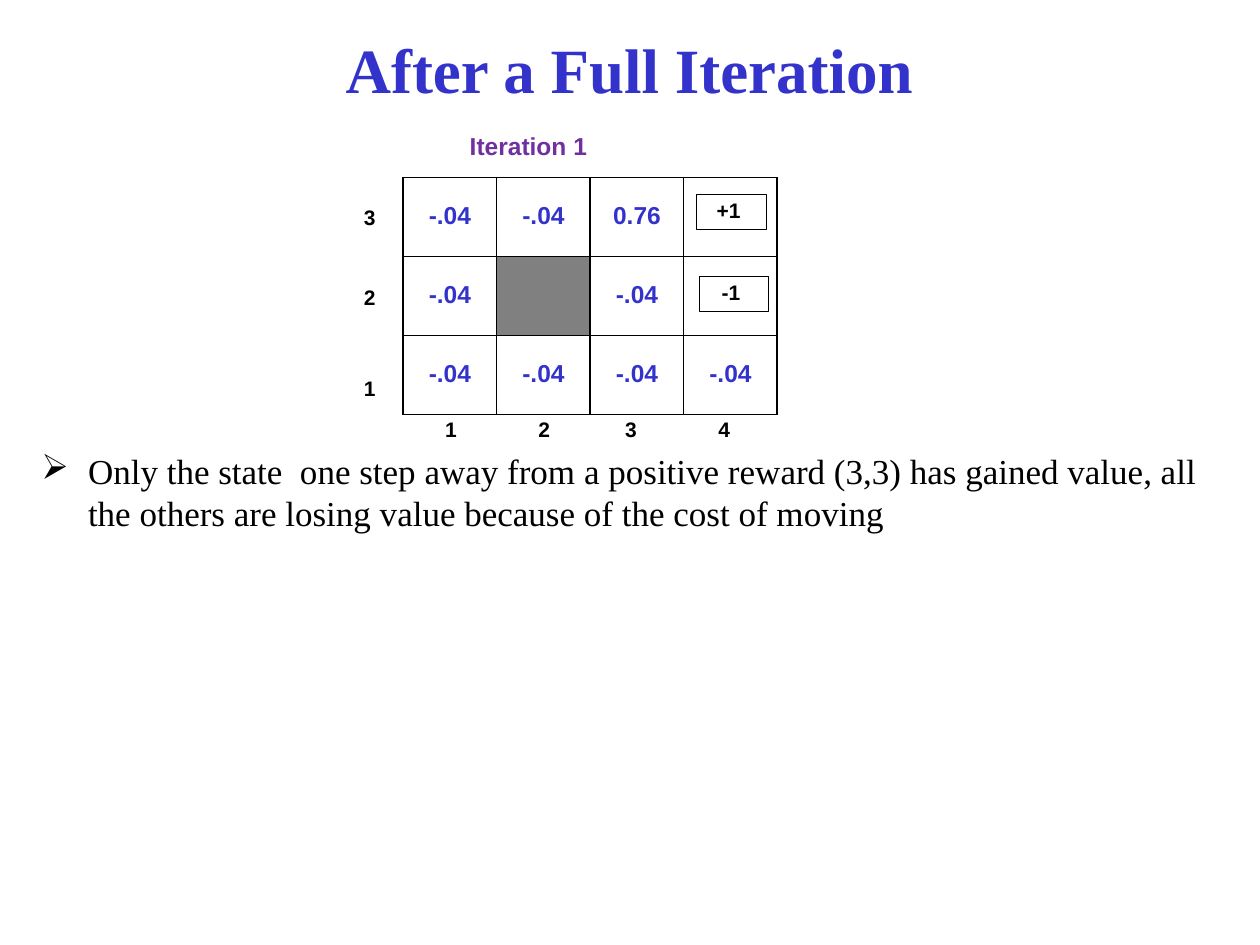
from typing import NamedTuple

from lxml import etree
from pptx import Presentation
from pptx import util as u
from pptx.dml.color import RGBColor
from pptx.enum import shapes, text
from pptx.oxml.ns import qn

BLACK, WHITE, BLUE, GRAY, PURPLE = "000000", "FFFFFF", "3333CC", "808080", "7030A0"
LEFT, TOP = 3.2, 1.41
WIDE, HIGH = 2.97, 1.88
VALUES = [
    ["-.04", "-.04", "0.76", ""],
    ["-.04", None, "-.04", ""],
    ["-.04", "-.04", "-.04", "-.04"],
]
STOPS = [0.28, 1.02, 1.71, 2.45]


class Box(NamedTuple):
    left: float
    top: float
    width: float
    height: float

    def place(self):
        return [u.Inches(n) for n in self]


class Reward(NamedTuple):
    label: str
    box: Box


REWARDS = [
    Reward("+1 ", Box(5.53, 1.54, 0.55, 0.28)),
    Reward("-1 ", Box(5.55, 2.19, 0.55, 0.28)),
]


def paint(color, code: str):
    color.rgb = RGBColor.from_string(code)


def write(para, words: str, size=12, font="Arial", color=BLACK, bold=True,
          align=text.PP_ALIGN.LEFT, space=0.9, before=0):
    para.alignment = align
    para.line_spacing = space
    para.space_before = u.Pt(before)
    run = para.add_run()
    run.text = words
    run.font.size = u.Pt(size)
    run.font.name = font
    run.font.bold = bold
    paint(run.font.color, color)


def frame(slide, box: Box):
    area = slide.shapes.add_textbox(*box.place()).text_frame
    area.word_wrap = True
    return area


def edge(cell):
    """Give a cell thin black borders on all four sides."""
    props = cell._tc.get_or_add_tcPr()
    for spot, side in enumerate(("lnL", "lnR", "lnT", "lnB")):
        line = etree.Element(qn(f"a:{side}"), w=str(u.Pt(1)))
        fill = etree.SubElement(line, qn("a:solidFill"))
        etree.SubElement(fill, qn("a:srgbClr"), val=BLACK)
        props.insert(spot, line)


def draw_grid(slide):
    rows, cols = len(VALUES), len(VALUES[0])
    place = Box(LEFT, TOP, WIDE, HIGH).place()
    table = slide.shapes.add_table(rows, cols, *place).table
    for r, line in enumerate(VALUES):
        for c, value in enumerate(line):
            cell = table.cell(r, c)
            cell.vertical_anchor = text.MSO_ANCHOR.MIDDLE
            cell.fill.solid()
            paint(cell.fill.fore_color, GRAY if value is None else WHITE)
            edge(cell)
            if value:
                write(cell.text_frame.paragraphs[0], value, size=14,
                      color=BLUE, align=text.PP_ALIGN.CENTER)


def draw_axes(slide):
    side = frame(slide, Box(2.66, 1.6, 0.55, 1.63))
    for n, (label, gap) in enumerate((("3", 0), ("2", 32.7), ("1", 39))):
        para = side.add_paragraph() if n else side.paragraphs[0]
        write(para, label, align=text.PP_ALIGN.CENTER, before=gap)

    para = frame(slide, Box(LEFT, 3.28, WIDE, 0.28)).paragraphs[0]
    write(para, "\t1\t2\t3\t4")
    tabs = etree.SubElement(para._p.get_or_add_pPr(), qn("a:tabLst"))
    for stop in STOPS:
        etree.SubElement(tabs, qn("a:tab"), pos=str(u.Inches(stop)), algn="ctr")


def draw_reward(slide, reward: Reward):
    shape = slide.shapes.add_shape(shapes.MSO_SHAPE.RECTANGLE, *reward.box.place())
    shape.shadow.inherit = False
    shape.fill.solid()
    paint(shape.fill.fore_color, WHITE)
    paint(shape.line.color, BLACK)
    shape.line.width = u.Pt(0.5)
    area = shape.text_frame
    area.vertical_anchor = text.MSO_ANCHOR.TOP
    write(area.paragraphs[0], reward.label, align=text.PP_ALIGN.CENTER)


def add_bullet(para, mark: str):
    props = para._p.get_or_add_pPr()
    props.set("marL", str(u.Inches(0.37)))
    props.set("indent", str(u.Inches(-0.37)))
    tint = etree.SubElement(props, qn("a:buClr"))
    etree.SubElement(tint, qn("a:srgbClr"), val=BLACK)
    etree.SubElement(props, qn("a:buChar"), char=mark)


def main():
    deck = Presentation()
    deck.slide_width, deck.slide_height = u.Inches(10), u.Inches(7.5)
    slide = deck.slides.add_slide(deck.slide_layouts[6])

    title = frame(slide, Box(0.33, 0.17, 9.33, 0.75))
    title.vertical_anchor = text.MSO_ANCHOR.MIDDLE
    write(title.paragraphs[0], "After a Full Iteration", size=36,
          font="Times New Roman", color=BLUE, align=text.PP_ALIGN.CENTER, space=1.0)

    draw_grid(slide)
    draw_axes(slide)
    for reward in REWARDS:
        draw_reward(slide, reward)

    head = frame(slide, Box(3.63, 1.02, 2.7, 0.31))
    write(head.paragraphs[0], "Iteration 1", size=14, color=PURPLE)

    note = frame(slide, Box(0.23, 3.52, 9.61, 0.71)).paragraphs[0]
    write(note, "Only the state  one step away from a positive reward (3,3) has "
          "gained value, all the others are losing value because of the cost of moving",
          size=20, font="Times New Roman", bold=False, space=1.0)
    add_bullet(note, "➢")

    deck.save("out.pptx")


if __name__ == "__main__":
    main()
